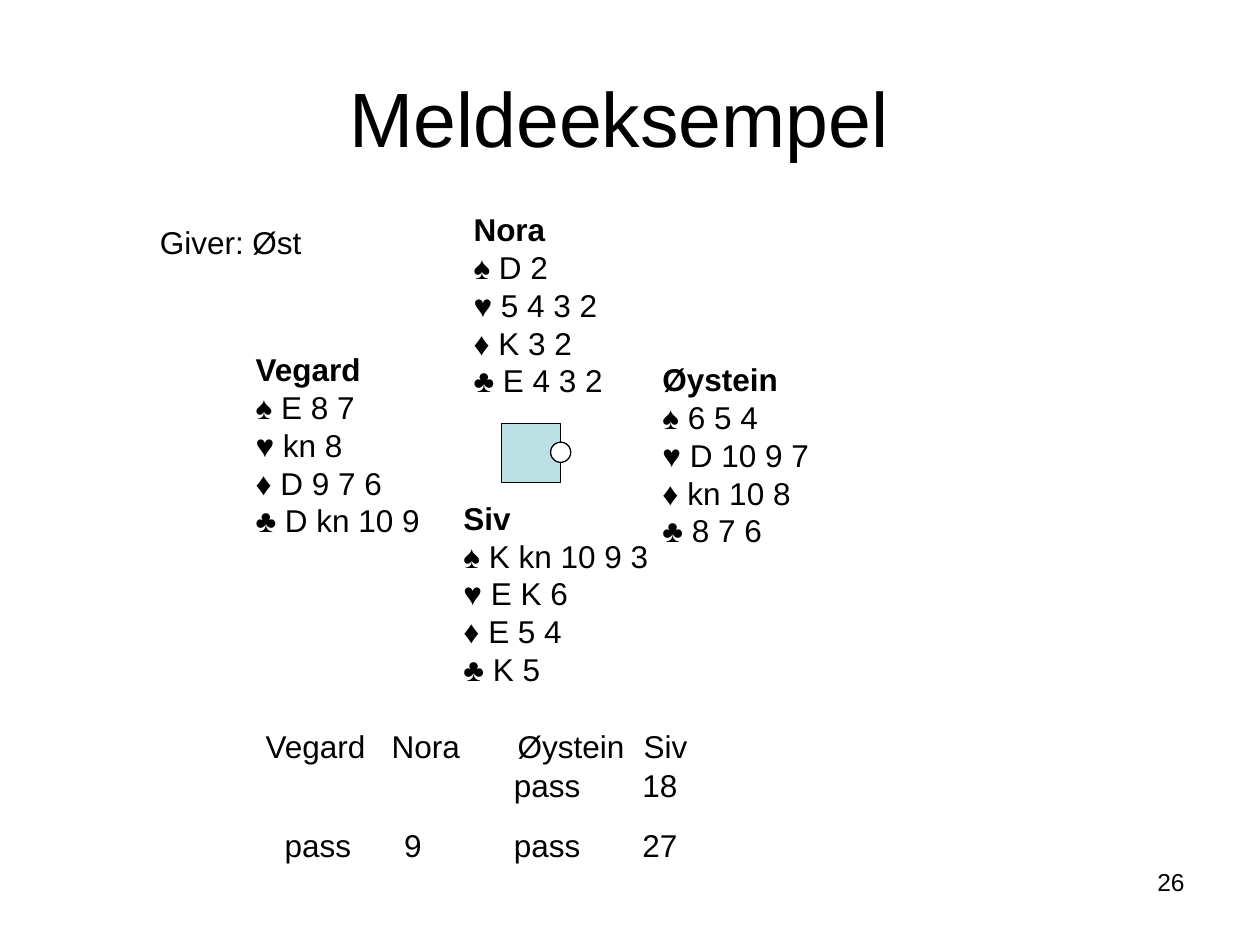
from dataclasses import dataclass

from lxml import etree
from pptx import Presentation
from pptx.dml.color import RGBColor
from pptx.enum.shapes import MSO_SHAPE
from pptx.enum.text import MSO_ANCHOR, PP_ALIGN
from pptx.oxml.ns import qn
from pptx.slide import Slide
from pptx.text.text import _Paragraph
from pptx.util import Inches, Pt

BLACK = RGBColor(0x00, 0x00, 0x00)
WHITE = RGBColor(0xFF, 0xFF, 0xFF)
TABLE_BLUE = RGBColor(0xBB, 0xE0, 0xE3)
FONT = "Arial"
LEFT, CENTER, RIGHT = PP_ALIGN.LEFT, PP_ALIGN.CENTER, PP_ALIGN.RIGHT
TOP, MIDDLE = MSO_ANCHOR.TOP, MSO_ANCHOR.MIDDLE
RECTANGLE, OVAL = MSO_SHAPE.RECTANGLE, MSO_SHAPE.OVAL
SUITS = "♠♥♦♣"


@dataclass(frozen=True)
class Box:
    left: float
    top: float
    width: float
    height: float


@dataclass(frozen=True)
class Hand:
    player: str
    box: Box
    cards: tuple[str, str, str, str]


@dataclass(frozen=True)
class Bid:
    text: str
    left: float
    top: float


HANDS = (
    Hand("Nora", Box(3.66, 1.62, 1.65, 1.6), ("D 2", "5 4 3 2", "K 3 2", "E 4 3 2")),
    Hand("Øystein", Box(5.16, 2.81, 1.5, 1.6), ("6 5 4", "D 10 9 7", "kn 10 8", "8 7 6")),
    Hand("Siv", Box(3.58, 3.91, 1.89, 1.6), ("K kn 10 9 3", "E K 6", "E 5 4", "K 5")),
    Hand("Vegard", Box(1.93, 2.73, 1.58, 1.6), ("E 8 7", "kn 8", "D 9 7 6", "D kn 10 9")),
)
FIRST_ROUND, SECOND_ROUND = 6.03, 6.51
BIDS = (
    Bid("pass", 3.98, FIRST_ROUND),
    Bid("18", 5, FIRST_ROUND),
    Bid("pass", 2.16, SECOND_ROUND),
    Bid("9", 3.11, SECOND_ROUND),
    Bid("pass", 3.98, SECOND_ROUND),
    Bid("27", 5, SECOND_ROUND),
)


def add_text(
    slide: Slide,
    box: Box,
    lines: list[str],
    size: int = 18,
    align: PP_ALIGN = LEFT,
    anchor: MSO_ANCHOR = TOP,
    bold_first: bool = False,
) -> list[_Paragraph]:
    shape = slide.shapes.add_textbox(
        Inches(box.left), Inches(box.top), Inches(box.width), Inches(box.height)
    )
    frame = shape.text_frame
    frame.word_wrap = True
    frame.vertical_anchor = anchor
    for index, line in enumerate(lines):
        paragraph = frame.add_paragraph() if index else frame.paragraphs[0]
        paragraph.alignment = align
        run = paragraph.add_run()
        run.text = line
        run.font.name = FONT
        run.font.size = Pt(size)
        run.font.bold = bold_first and index == 0
        run.font.color.rgb = BLACK
    return list(frame.paragraphs)


def add_tab_stops(paragraph: _Paragraph, count: int, step: float) -> None:
    properties = paragraph._p.get_or_add_pPr()
    tab_list = etree.SubElement(properties, qn("a:tabLst"))
    for number in range(1, count + 1):
        position = str(Inches(number * step))
        etree.SubElement(tab_list, qn("a:tab"), pos=position, algn="l")


def add_hand(slide: Slide, hand: Hand) -> None:
    suits = [f"{suit} {cards}" for suit, cards in zip(SUITS, hand.cards)]
    add_text(slide, hand.box, [hand.player, *suits], bold_first=True)


def add_outlined_shape(slide: Slide, kind: MSO_SHAPE, box: Box, fill: RGBColor) -> None:
    shape = slide.shapes.add_shape(
        kind, Inches(box.left), Inches(box.top), Inches(box.width), Inches(box.height)
    )
    shape.shadow.inherit = False
    shape.fill.solid()
    shape.fill.fore_color.rgb = fill
    shape.line.color.rgb = BLACK
    shape.line.width = Pt(0.75)


def main() -> None:
    presentation = Presentation()
    presentation.slide_width = Inches(10)
    presentation.slide_height = Inches(7.5)
    slide = presentation.slides.add_slide(presentation.slide_layouts[6])

    add_text(slide, Box(0.5, 0.3, 9, 1.25), ["Meldeeksempel "], 44, CENTER, MIDDLE)
    for hand in HANDS:
        add_hand(slide, hand)

    players = ["Vegard", "Nora", "Øystein", "Siv"]
    header = add_text(slide, Box(2.01, 5.72, 5.43, 0.4), ["\t".join(players)])
    add_tab_stops(header[0], len(players) - 1, 1)
    for bid in BIDS:
        add_text(slide, Box(bid.left, bid.top, 0.79, 0.4), [bid.text])

    add_text(slide, Box(1.17, 1.72, 1.95, 0.4), ["Giver: Øst"])
    add_text(slide, Box(7.17, 6.83, 2.33, 0.52), ["26"], 14, RIGHT)
    add_outlined_shape(slide, RECTANGLE, Box(3.98, 3.36, 0.47, 0.47), TABLE_BLUE)
    add_outlined_shape(slide, OVAL, Box(4.37, 3.51, 0.16, 0.16), WHITE)

    presentation.save("out.pptx")


if __name__ == "__main__":
    main()
